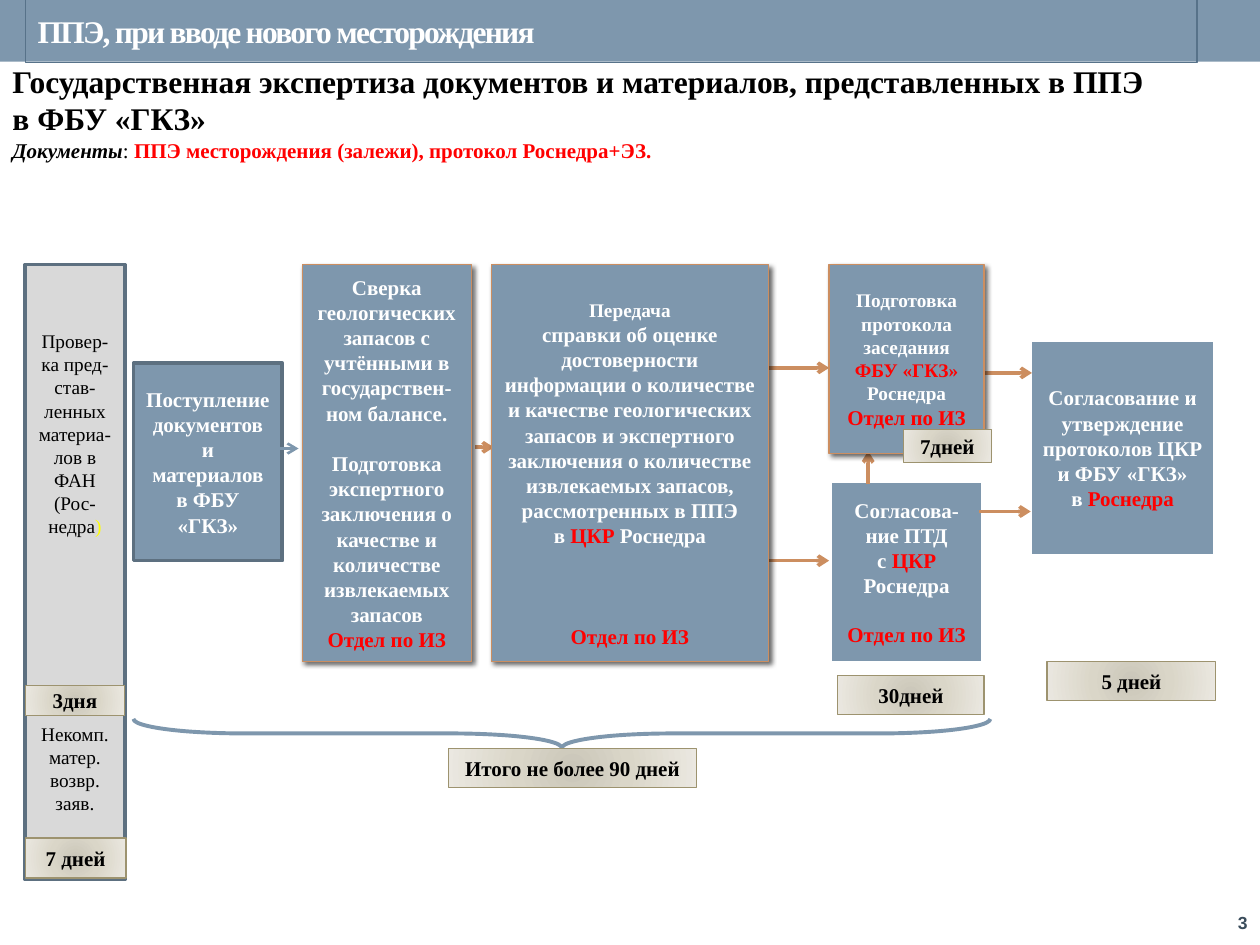
from lxml import etree
from pptx import Presentation
from pptx.dml.color import RGBColor
from pptx.enum.shapes import MSO_CONNECTOR as Connector, MSO_SHAPE as Shape
from pptx.enum.text import MSO_ANCHOR as Anchor, PP_ALIGN as Align
from pptx.oxml import parse_xml
from pptx.oxml.ns import nsdecls, qn
from pptx.util import Pt

BLUE, DARK_BLUE, ORANGE = "7E97AD", "5D7080", "CC8E60"
WHITE, BLACK, RED = "FFFFFF", "000000", "FF0000"


def rgb(value):
    return RGBColor.from_string(value)


def span(text, **text_format):
    """Pair a piece of text with its format."""
    return text, text_format


def red(text, **text_format):
    return span(text, color=RED, **text_format)


class SlideBuilder:
    """Holds the style and the slide; all lengths are in points."""

    font = "Times New Roman"
    gradient = ((0, "CAC6B9"), (45, "DAD6C8"), (100, "EBE8E1"))

    def __init__(self, slide):
        self.slide = slide

    def add_span(self, paragraph, text, size=12, color=BLACK, bold=True,
                 italic=False, font=None, spacing=None):
        run = paragraph.add_run()
        run.text = text
        run.font.name = font or self.font
        run.font.size = Pt(size)
        run.font.bold = bold
        run.font.italic = italic
        run.font.color.rgb = rgb(color)
        if spacing is not None:
            run._r.get_or_add_rPr().set("spc", str(round(spacing * 100)))

    def fill_text(self, frame, paragraphs, gaps=None, align=Align.CENTER,
                  anchor=Anchor.MIDDLE, **defaults):
        """Add lists of spans; gaps maps a paragraph index to its space before."""
        frame.word_wrap = True
        frame.vertical_anchor = anchor
        for index, spans in enumerate(paragraphs):
            paragraph = frame.add_paragraph() if index else frame.paragraphs[0]
            paragraph.alignment = align
            if gaps and index in gaps:
                paragraph.space_before = Pt(gaps[index])
            for text, text_format in spans:
                self.add_span(paragraph, text, **{**defaults, **text_format})

    def text(self, left, top, width, height, paragraphs, **options):
        box = self.slide.shapes.add_textbox(Pt(left), Pt(top), Pt(width), Pt(height))
        self.fill_text(box.text_frame, paragraphs, **options)

    def shape(self, kind, left, top, width, height, fill=None, line=None, weight=0.75):
        shape = self.slide.shapes.add_shape(kind, Pt(left), Pt(top), Pt(width), Pt(height))
        shape.shadow.inherit = False
        if fill:
            shape.fill.solid()
            shape.fill.fore_color.rgb = rgb(fill)
        else:
            shape.fill.background()
        if line:
            shape.line.color.rgb = rgb(line)
            shape.line.width = Pt(weight)
        else:
            shape.line.fill.background()
        return shape

    def box(self, left, top, width, height, paragraphs, fill=BLUE, line=WHITE,
            weight=3.5, color=WHITE, top_inset=3.6, **options):
        shape = self.shape(Shape.RECTANGLE, left, top, width, height, fill, line, weight)
        shape.text_frame.margin_top = Pt(top_inset)
        self.fill_text(shape.text_frame, paragraphs, color=color, **options)
        return shape

    def raised_box(self, *place, **options):
        """Draw an orange-edged box with a soft shadow."""
        shape = self.box(*place, line=ORANGE, weight=0.75, **options)
        effects = shape._element.spPr.find(qn("a:effectLst"))
        effects.append(parse_xml(
            f'<a:outerShdw {nsdecls("a")} blurRad="{Pt(3)}" dist="{Pt(2)}" dir="2700000">'
            f'<a:srgbClr val="{BLACK}"><a:alpha val="60000"/></a:srgbClr></a:outerShdw>'))

    def badge(self, left, top, width, height, label):
        """Draw a beige term label with a radial gradient."""
        shape = self.box(left, top, width, height, [[span(label)]],
                         line="9D936F", weight=0.75, color=BLACK)
        stops = "".join(f'<a:gs pos="{position * 1000}"><a:srgbClr val="{color}"/></a:gs>'
                        for position, color in self.gradient)
        properties = shape._element.spPr
        properties.replace(properties.find(qn("a:solidFill")), parse_xml(
            f'<a:gradFill {nsdecls("a")}><a:gsLst>{stops}</a:gsLst><a:path path="circle">'
            '<a:fillToRect l="100000" t="100000" r="100000" b="100000"/></a:path></a:gradFill>'))

    def arrow(self, x1, y1, x2, y2, color=ORANGE, weight=2.08):
        arrow = self.slide.shapes.add_connector(
            Connector.STRAIGHT, Pt(x1), Pt(y1), Pt(x2), Pt(y2))
        arrow.line.color.rgb = rgb(color)
        arrow.line.width = Pt(weight)
        properties = arrow._element.spPr
        etree.SubElement(properties.find(qn("a:ln")), qn("a:tailEnd"), type="arrow")
        etree.SubElement(properties, qn("a:effectLst"))

    def brace_below(self, left, top, width, height):
        """Draw a brace over a horizontal span, pointing down."""
        brace = self.shape(Shape.LEFT_BRACE, left + (width - height) / 2,
                           top + (height - width) / 2, height, width,
                           line=BLUE, weight=2.25)
        brace.adjustments[0] = 3.815
        brace.rotation = 270


def main():
    presentation = Presentation()
    presentation.slide_width, presentation.slide_height = Pt(720), Pt(540)
    slide = presentation.slides.add_slide(presentation.slide_layouts[6])
    builder = SlideBuilder(slide)

    builder.shape(Shape.RECTANGLE, 0, 0, 720, 35.3, fill=BLUE)
    builder.box(14.4, -0.7, 669.6, 36.5,
                [[span("ППЭ, при вводе нового месторождения", size=18, spacing=-1)]],
                fill=None, line="577289", weight=0.75, align=Align.LEFT)
    builder.text(689.8, 514.1, 30.2, 25.9, [[span("3")]], size=10, font="Arial",
                 color="3A4C5B", align=Align.RIGHT)
    builder.text(0, 31.7, 711.4, 65.5, [
        [span("Государственная экспертиза документов и материалов, представленных в ППЭ", size=18)],
        [span("в ФБУ «ГКЗ»", size=18)],
        [span("Документы", italic=True), span(": ", bold=False),
         red("ППЭ месторождения (залежи), протокол Роснедра+ЭЗ.")],
    ], align=Align.LEFT, anchor=Anchor.TOP)

    builder.box(14.4, 151.2, 56.9, 351.4, [
        [span("Провер-ка пред-став-ленных материа-лов в ФАН (Рос-недра"),
         span(")", color="FFFF00")],
        [span("Некомп.матер. возвр.")],
        [span("заяв.")],
    ], fill="D9D9D9", line=DARK_BLUE, weight=2.08, color=BLACK, size=11, bold=False,
        gaps={1: 105.6})
    builder.box(76.3, 207.4, 85, 113, [
        [span("Поступление документов и материалов в ФБУ «ГКЗ»")],
    ], line=DARK_BLUE, weight=2.08)
    builder.box(473.8, 274.3, 88.6, 105.1, [
        [span("Согласова-ние ПТД")],
        [span("с "), red("ЦКР "), span("Роснедра")],
        [red("Отдел по ИЗ")],
    ], gaps={2: 13.2})
    builder.box(588.2, 193.7, 106.6, 124.6, [
        [span("Согласование и утверждение протоколов ЦКР и ФБУ «ГКЗ»")],
        [span("в "), red("Роснедра")],
    ])

    builder.arrow(152, 256.3, 170.6, 256.3, color=BLUE, weight=1.5)
    for x1, y1, x2, y2 in (
        (271.4, 255.6, 282.2, 255.6),
        (439.2, 210.2, 473.8, 210.2),
        (439.2, 320.4, 473.8, 320.4),
        (555.1, 213.1, 589.7, 213.1),
        (559.4, 292.3, 589, 292.3),
        (496.1, 276.5, 496.1, 257.8),
    ):
        builder.arrow(x1, y1, x2, y2)

    builder.raised_box(172.8, 151.2, 96.5, 226.8, [
        [span("Сверка геологических запасов с учтёнными в государствен-ном балансе.")],
        [span("Подготовка экспертного заключения о качестве и количестве извлекаемых запасов")],
        [red("Отдел по ИЗ")],
    ], gaps={1: 14.4})
    builder.raised_box(280.8, 151.2, 158.4, 226.8, [
        [span("Передача", size=11)],
        [span("справки об оценке достоверности информации о количестве и качестве "
              "геологических запасов и экспертного заключения о количестве "
              "извлекаемых запасов, рассмотренных в ППЭ")],
        [span("в "), red("ЦКР"), span(" Роснедра")],
        [red("Отдел по ИЗ")],
    ], gaps={3: 43.2}, top_inset=15.6)
    builder.raised_box(473.8, 151.2, 88.6, 108, [
        [span("Подготовка протокола заседания")],
        [red("ФБУ «ГКЗ» "), span("Роснедра")],
        [red("Отдел по ИЗ", size=12)],
    ], size=11)

    builder.brace_below(76.3, 410.8, 489.6, 16.6)
    for left, top, width, height, label in (
        (14.4, 391.7, 56.9, 17.3, "3дня"),
        (14.4, 478.8, 57.6, 23, "7 дней"),
        (256.3, 427.7, 141.8, 22.3, "Итого не более 90 дней"),
        (478.8, 385.9, 83.5, 22.3, "30дней"),
        (516.2, 245.5, 50.4, 18.7, "7дней"),
        (598.3, 378, 96.5, 22.3, "5 дней"),
    ):
        builder.badge(left, top, width, height, label)

    presentation.save("out.pptx")


if __name__ == "__main__":
    main()
